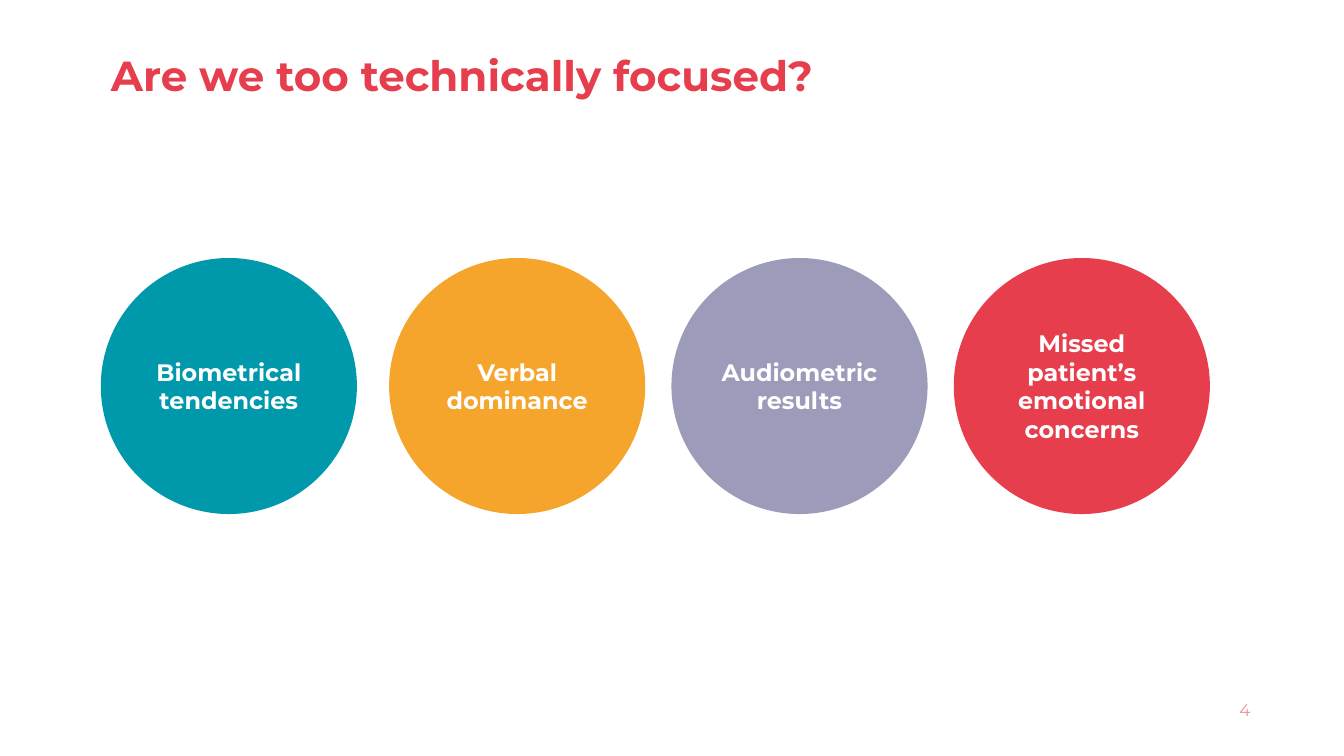
from lxml.etree import SubElement
from pptx import Presentation
from pptx.dml.color import RGBColor
from pptx.enum.shapes import MSO_SHAPE
from pptx.enum.text import MSO_ANCHOR, PP_ALIGN
from pptx.oxml.ns import qn
from pptx.util import Inches, Pt

WHITE = RGBColor(0xFF, 0xFF, 0xFF)
RED = RGBColor(0xE6, 0x3E, 0x4D)
PALE_RED = RGBColor(0xED, 0x92, 0x97)
TEAL = RGBColor(0x00, 0x99, 0xAC)
ORANGE = RGBColor(0xF5, 0xA5, 0x2B)
VIOLET = RGBColor(0x67, 0x66, 0x96)

LEFT_MARGIN = 1
CIRCLE_TOP = 2.56
DIAMETER = 2.54
SECOND_LEFT = 3.86
PITCH = 2.8


def write(shape, text, size, color, alignment, bold=True):
    text_frame = shape.text_frame
    text_frame.text = text
    text_frame.word_wrap = True
    text_frame.vertical_anchor = MSO_ANCHOR.MIDDLE
    paragraph = text_frame.paragraphs[0]
    paragraph.alignment = alignment
    font = paragraph.runs[0].font
    font.name = "Montserrat"
    font.size = Pt(size)
    font.bold = bold
    font.color.rgb = color


presentation = Presentation()
presentation.slide_width = Inches(13.33)
presentation.slide_height = Inches(7.5)
slide = presentation.slides.add_slide(presentation.slide_layouts[5])

title = slide.shapes.title
title.left, title.top = Inches(LEFT_MARGIN), Inches(0.46)
title.width, title.height = Inches(11.5), Inches(0.63)
write(title, "Are we too technically focused?", 30, RED, PP_ALIGN.LEFT)
title.text_frame.paragraphs[0].line_spacing = 0.9

circles = [
    ("Biometrical tendencies", TEAL, 100),
    ("Verbal dominance", ORANGE, 100),
    ("Audiometric results", VIOLET, 65),
    ("Missed patient’s emotional concerns", RED, 100),
]
for index, (label, color, opacity) in enumerate(circles):
    left = SECOND_LEFT + (index - 1) * PITCH if index else LEFT_MARGIN
    circle = slide.shapes.add_shape(
        MSO_SHAPE.OVAL, Inches(left), Inches(CIRCLE_TOP), Inches(DIAMETER), Inches(DIAMETER)
    )
    circle.shadow.inherit = False
    circle.fill.solid()
    circle.fill.fore_color.rgb = color
    circle.line.fill.background()
    if opacity < 100:
        fill_color = circle.fill._xPr.find(qn("a:solidFill"))[0]
        SubElement(fill_color, qn("a:alpha"), val=str(opacity * 1000))
    write(circle, label, 17, WHITE, PP_ALIGN.CENTER)

page_number = slide.shapes.add_textbox(Inches(9.5), Inches(6.84), Inches(3), Inches(0.4))
write(page_number, "4", 12, PALE_RED, PP_ALIGN.RIGHT, bold=False)

presentation.save("out.pptx")
